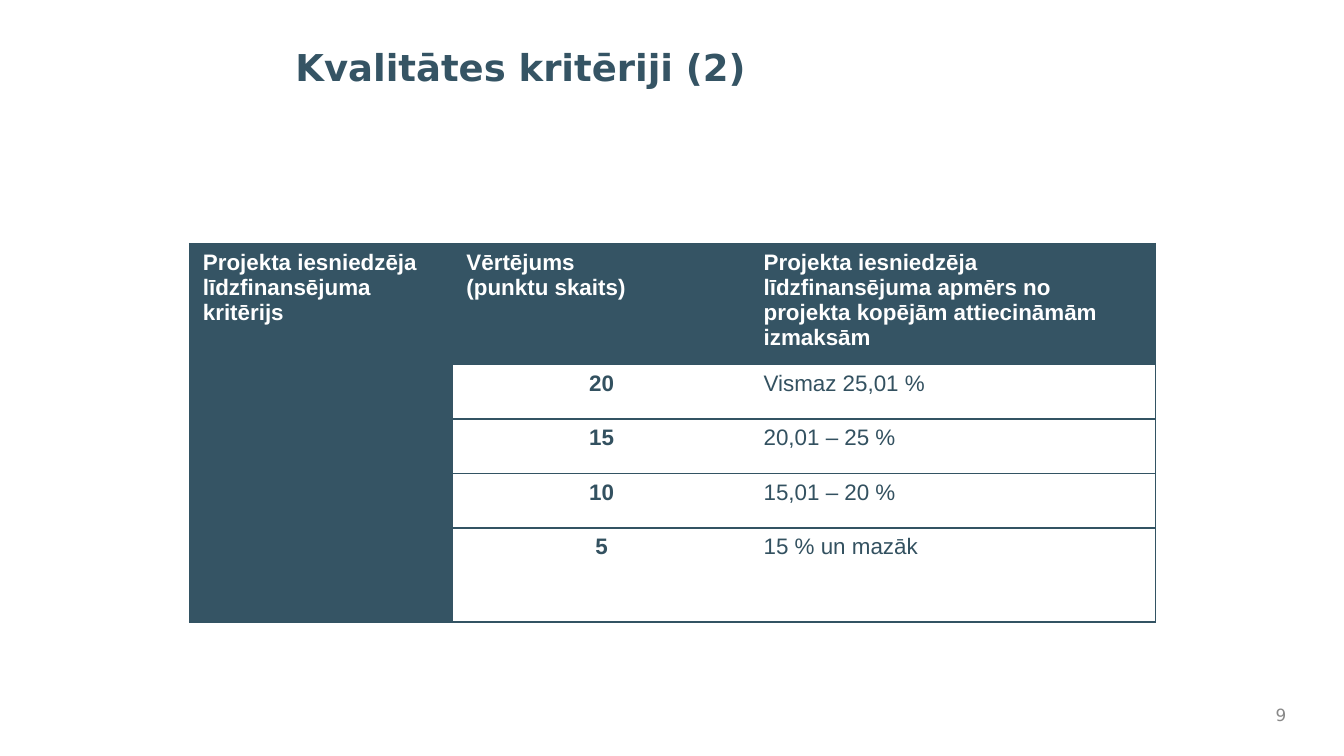
from lxml.etree import SubElement
from pptx import Presentation
from pptx.dml.color import RGBColor
from pptx.enum.text import MSO_ANCHOR, PP_ALIGN
from pptx.oxml.ns import qn
from pptx.util import Pt

HUES = {"title": "355464", "fill": "355464", "line": "335363",
        "body": "335160", "white": "FFFFFF", "page": "898989"}


def write(frame, text, hue, align=PP_ALIGN.LEFT, **font):
    frame.text = text
    for para in frame.paragraphs:
        para.alignment = align
        for run in para.runs:
            run.font.color.rgb = RGBColor.from_string(HUES[hue])
            for key, val in font.items():
                setattr(run.font, key, val)


def edge(cell, side, shown):
    line = SubElement(cell._tc.get_or_add_tcPr(), qn(f"a:ln{side}"), w=str(Pt(0.75)))
    if shown:
        fill = SubElement(line, qn("a:solidFill"))
        SubElement(fill, qn("a:srgbClr"), val=HUES["line"])
    else:
        SubElement(line, qn("a:noFill"))


deck = Presentation()
deck.slide_width, deck.slide_height = Pt(720), Pt(405)
slide = deck.slides.add_slide(deck.slide_layouts[6])

# Title and page number
LABELS = [
    ("Kvalitātes kritēriji (2)", (151.2, 20.2, 480, 33.8), "title",
     PP_ALIGN.LEFT, MSO_ANCHOR.TOP, {"size": Pt(19.8), "bold": True}),
    ("9", (650.2, 373.7, 46, 18), "page",
     PP_ALIGN.RIGHT, MSO_ANCHOR.MIDDLE, {"size": Pt(9), "bold": False}),
]
for text, spot, hue, align, anchor, font in LABELS:
    frame = slide.shapes.add_textbox(*map(Pt, spot)).text_frame
    frame.word_wrap = True
    frame.vertical_anchor = anchor
    write(frame, text, hue, align, name="DejaVu Sans", **font)

# Criteria table
ROWS = [
    ("Projekta iesniedzēja līdzfinansējuma kritērijs",
     "Vērtējums\n(punktu skaits)",
     "Projekta iesniedzēja līdzfinansējuma apmērs no projekta kopējām "
     "attiecināmām izmaksām"),
    ("", "20", "Vismaz 25,01 %"),
    ("", "15", "20,01 – 25 %"),
    ("", "10", "15,01 – 20 %"),
    ("", "5", "15 % un mazāk"),
]
WIDE = [141.2, 159.2, 217.2]
HIGH = [61, 29.2, 29.2, 29.2, 47.6]
table = slide.shapes.add_table(
    len(HIGH), len(WIDE), Pt(101.5), Pt(130.4), Pt(sum(WIDE)), Pt(sum(HIGH))).table
table.horz_banding = False
for col, wide in zip(table.columns, WIDE):
    col.width = Pt(wide)
for row, high in zip(table.rows, HIGH):
    row.height = Pt(high)
table.cell(0, 0).merge(table.cell(4, 0))

for r, texts in enumerate(ROWS):
    for c, text in enumerate(texts):
        cell = table.cell(r, c)
        dark = r == 0 or c == 0
        for side, shown in (("L", c == 0), ("R", c == 2), ("T", True), ("B", True)):
            edge(cell, side, shown)
        cell.fill.solid()
        cell.fill.fore_color.rgb = RGBColor.from_string(HUES["fill" if dark else "white"])
        if text:
            align = (PP_ALIGN.CENTER if r and c == 1
                     else PP_ALIGN.JUSTIFY if c == 1 else PP_ALIGN.LEFT)
            write(cell.text_frame, text, "white" if dark else "body", align,
                  name="Arial", size=Pt(12), bold=dark or c == 1)

deck.save("out.pptx")
